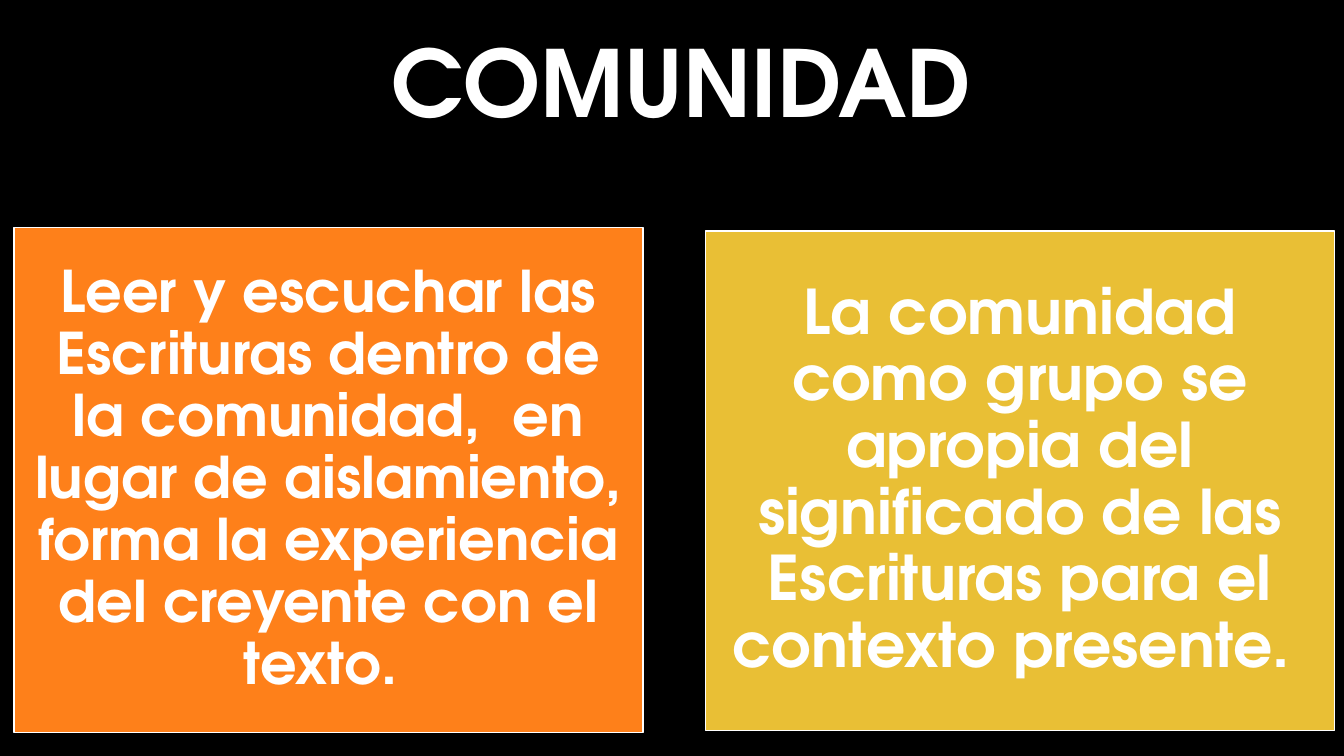
import dataclasses

import pptx
import pptx.dml.color
import pptx.enum.shapes
import pptx.enum.text
import pptx.util

Pt = pptx.util.Pt
RGB = pptx.dml.color.RGBColor.from_string


@dataclasses.dataclass(frozen=True)
class Theme:
    font: str = "TeX Gyre Adventor"
    background: str = "000000"
    text: str = "FFFFFF"
    orange: str = "FE801A"
    yellow: str = "E9BF35"
    title_size: float = 66
    left_size: float = 41
    right_size: float = 44


THEME = Theme()


def write_text(sp, text, size):
    """Fill a shape with one centred bold paragraph."""
    tf = sp.text_frame
    tf.word_wrap = True
    tf.auto_size = pptx.enum.text.MSO_AUTO_SIZE.NONE
    tf.vertical_anchor = pptx.enum.text.MSO_ANCHOR.MIDDLE
    p = tf.paragraphs[0]
    p.text = text
    p.alignment = pptx.enum.text.PP_ALIGN.CENTER
    p.line_spacing = 0.9
    p.font.name = THEME.font
    p.font.size = Pt(size)
    p.font.bold = True
    p.font.color.rgb = RGB(THEME.text)


def set_title(slide, text):
    sp = slide.shapes.title
    sp.left, sp.top, sp.width, sp.height = Pt(112.3), Pt(9.4), Pt(748.8), Pt(105.8)
    write_text(sp, text, THEME.title_size)


def add_card(slide, left, top, height, color, text, size, inset):
    sp = slide.shapes.add_shape(pptx.enum.shapes.MSO_SHAPE.RECTANGLE,
                                Pt(left), Pt(top), Pt(449.3), Pt(height))
    sp.shadow.inherit = False
    sp.fill.solid()
    sp.fill.fore_color.rgb = RGB(color)
    sp.line.color.rgb = RGB(THEME.text)
    sp.line.width = Pt(1)
    write_text(sp, text, size)
    tf = sp.text_frame
    tf.margin_left = tf.margin_right = tf.margin_top = tf.margin_bottom = Pt(inset)


def main():
    prs = pptx.Presentation()
    prs.slide_width, prs.slide_height = Pt(960), Pt(540)
    slide = prs.slides.add_slide(prs.slide_layouts[5])

    # Background and title
    slide.background.fill.solid()
    slide.background.fill.fore_color.rgb = RGB(THEME.background)
    set_title(slide, "COMUNIDAD")

    # Two cards side by side
    add_card(slide, 10.1, 162.7, 360.7, THEME.orange,
             "Leer y escuchar las Escrituras dentro de la comunidad,  en lugar de "
             "aislamiento, forma la experiencia del creyente con el texto. ",
             THEME.left_size, 12.3)
    add_card(slide, 504, 164.9, 357.1, THEME.yellow,
             "La comunidad como grupo se apropia del significado de las Escrituras "
             "para el contexto presente. ",
             THEME.right_size, 13.2)

    prs.save("out.pptx")


if __name__ == "__main__":
    main()
